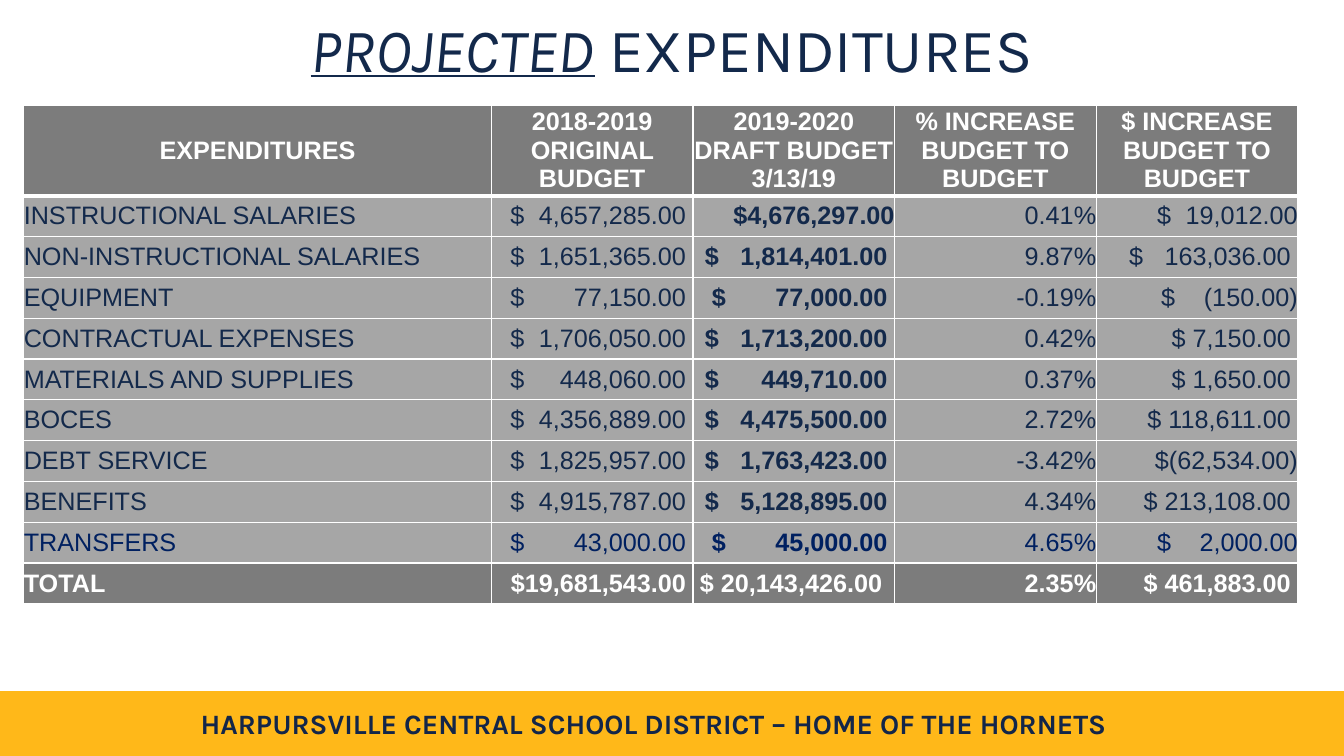
from lxml.etree import SubElement
from pptx import Presentation
from pptx.dml.color import RGBColor
from pptx.enum.shapes import MSO_SHAPE as Shape
from pptx.enum.text import MSO_ANCHOR as Anchor, MSO_AUTO_SIZE as AutoSize, PP_ALIGN as Align
from pptx.oxml import parse_xml
from pptx.oxml.ns import nsdecls, qn
from pptx.util import Pt

TITLE = [("PROJECTED", True), (" EXPENDITURES", False)]
FOOTER = "HARPURSVILLE CENTRAL SCHOOL DISTRICT – HOME OF THE HORNETS"
ROWS = [
    ("EXPENDITURES", "2018-2019 ORIGINAL BUDGET", "2019-2020 DRAFT BUDGET 3/13/19",
     "% INCREASE BUDGET TO BUDGET", "$ INCREASE BUDGET TO BUDGET"),
    ("INSTRUCTIONAL SALARIES", "$\t4,657,285.00", "$4,676,297.00", "0.41%", "$\t19,012.00"),
    ("NON-INSTRUCTIONAL SALARIES", "$\t1,651,365.00", "$\t1,814,401.00", "9.87%", "$\t163,036.00"),
    ("EQUIPMENT", "$\t77,150.00", "$\t77,000.00", "-0.19%", "$\t(150.00)"),
    ("CONTRACTUAL EXPENSES", "$\t1,706,050.00", "$\t1,713,200.00", "0.42%", "$ 7,150.00"),
    ("MATERIALS AND SUPPLIES", "$\t448,060.00", "$\t449,710.00", "0.37%", "$ 1,650.00"),
    ("BOCES", "$\t4,356,889.00", "$\t4,475,500.00", "2.72%", "$ 118,611.00"),
    ("DEBT SERVICE", "$\t1,825,957.00", "$\t1,763,423.00", "-3.42%", "$(62,534.00)"),
    ("BENEFITS", "$\t4,915,787.00", "$\t5,128,895.00", "4.34%", "$ 213,108.00"),
    ("TRANSFERS", "$\t43,000.00", "$\t45,000.00", "4.65%", "$\t2,000.00"),
    ("TOTAL", "$19,681,543.00", "$ 20,143,426.00", "2.35%", "$ 461,883.00"),
]
LAST = len(ROWS) - 1
DRAFT, PERCENT = 2, 3
COLUMN_WIDTHS = [334, 144, 144, 144, 144]
HEADER_HEIGHT, ROW_HEIGHT = 60, 29.15
TABLE_LEFT, TABLE_TOP = 17, 75
NUMBER_MARGIN = 5
FLUSH_CELLS = {(1, 2), (1, 4), (3, 4), (7, 4), (9, 4)}
DOLLAR_LEFT = {1: 13.6, 2: 8.6}
DOLLAR_LEFT_IN_CELL = {(3, 2): 13.6, (9, 2): 13.6, (1, 4): 43.6, (2, 4): 23.6,
                       (3, 4): 46.4, (9, 4): 43.6}

NAVY, BLUE, WHITE, GOLD = "13294B", "002060", "FFFFFF", "FFB819"
DARK_GRAY, LIGHT_GRAY = "7C7C7C", "A6A6A6"


def color(value):
    return RGBColor.from_string(value)


def set_format(target, values):
    for name, value in values.items():
        setattr(target, name, value)


def set_font(font, hex_color, **values):
    set_format(font, values)
    font.color.rgb = color(hex_color)


def set_fill(owner, hex_color):
    owner.fill.solid()
    owner.fill.fore_color.rgb = color(hex_color)


def set_borders(cell, widths):
    properties = cell._tc.get_or_add_tcPr()
    for index, (side, width) in enumerate(widths.items()):
        properties.insert(index, parse_xml(
            f'<a:ln{side} {nsdecls("a")} w="{Pt(width)}"><a:solidFill>'
            f'<a:srgbClr val="{WHITE}"/></a:solidFill></a:ln{side}>'))


def add_right_tab(paragraph, position):
    tabs = SubElement(paragraph._p.get_or_add_pPr(), qn("a:tabLst"))
    SubElement(tabs, qn("a:tab"), pos=str(Pt(position)), algn="r")


def fill_cell(cell, row, column, text):
    header, total = row == 0, row == LAST
    left = right = 0
    alignment = Align.RIGHT
    if header:
        alignment = Align.CENTER
    elif column == 0:
        alignment = Align.LEFT
    elif column != PERCENT and (row, column) not in FLUSH_CELLS:
        right = NUMBER_MARGIN

    paragraph = cell.text_frame.paragraphs[0]
    if "\t" in text:
        left = DOLLAR_LEFT_IN_CELL.get((row, column), DOLLAR_LEFT.get(column))
        add_right_tab(paragraph, COLUMN_WIDTHS[column] - left - right)
        alignment, right = Align.LEFT, 0
    elif total and column == DRAFT:
        alignment, left, right = Align.LEFT, NUMBER_MARGIN, 0

    set_format(cell, dict(margin_left=Pt(left), margin_right=Pt(right), margin_top=0,
                          margin_bottom=0, vertical_anchor=Anchor.MIDDLE))
    paragraph.alignment = alignment
    run = paragraph.add_run()
    run.text = text
    strong = header or total
    text_color = WHITE if strong else BLUE if row == LAST - 1 else NAVY
    set_font(run.font, text_color, name="Arial", size=Pt(18), bold=strong or column == DRAFT)
    set_fill(cell, DARK_GRAY if strong else LIGHT_GRAY)
    set_borders(cell, {"L": 1, "R": 1, "T": 3 if row == 1 else 1, "B": 3 if header else 1})


def add_footer(slide):
    bar = slide.shapes.add_shape(Shape.RECTANGLE, 0, Pt(494), Pt(960), Pt(45.5))
    bar.shadow.inherit = False
    set_fill(bar, GOLD)
    bar.line.color.rgb = color(GOLD)
    bar.line.width = Pt(1)
    box = slide.shapes.add_textbox(Pt(127), Pt(501), Pt(680), Pt(32))
    box.text_frame.word_wrap = True
    paragraph = box.text_frame.paragraphs[0]
    paragraph.alignment = Align.CENTER
    run = paragraph.add_run()
    run.text = FOOTER
    set_font(run.font, "132649", name="Karla", size=Pt(20), bold=True)


def add_title(slide):
    title = slide.shapes.title
    set_format(title, dict(left=Pt(66), top=0, width=Pt(828), height=Pt(75)))
    set_fill(title, WHITE)
    set_format(title.text_frame, dict(vertical_anchor=Anchor.MIDDLE, word_wrap=True,
                                      auto_size=AutoSize.NONE))
    paragraph = title.text_frame.paragraphs[0]
    set_format(paragraph, dict(alignment=Align.CENTER, line_spacing=0.9))
    for text, emphasized in TITLE:
        run = paragraph.add_run()
        run.text = text
        set_font(run.font, NAVY, name="Karla", size=Pt(44),
                 italic=emphasized, underline=emphasized)


def add_budget_table(slide):
    height = HEADER_HEIGHT + LAST * ROW_HEIGHT
    table = slide.shapes.add_table(len(ROWS), len(COLUMN_WIDTHS), Pt(TABLE_LEFT), Pt(TABLE_TOP),
                                   Pt(sum(COLUMN_WIDTHS)), Pt(height)).table
    table.horz_banding = False
    for column, width in enumerate(COLUMN_WIDTHS):
        table.columns[column].width = Pt(width)
    for row, texts in enumerate(ROWS):
        table.rows[row].height = Pt(ROW_HEIGHT if row else HEADER_HEIGHT)
        for column, text in enumerate(texts):
            fill_cell(table.cell(row, column), row, column, text)


def main():
    presentation = Presentation()
    set_format(presentation, dict(slide_width=Pt(960), slide_height=Pt(540)))
    slide = presentation.slides.add_slide(presentation.slide_layouts[5])
    add_footer(slide)
    add_title(slide)
    add_budget_table(slide)
    presentation.save("out.pptx")


if __name__ == "__main__":
    main()
